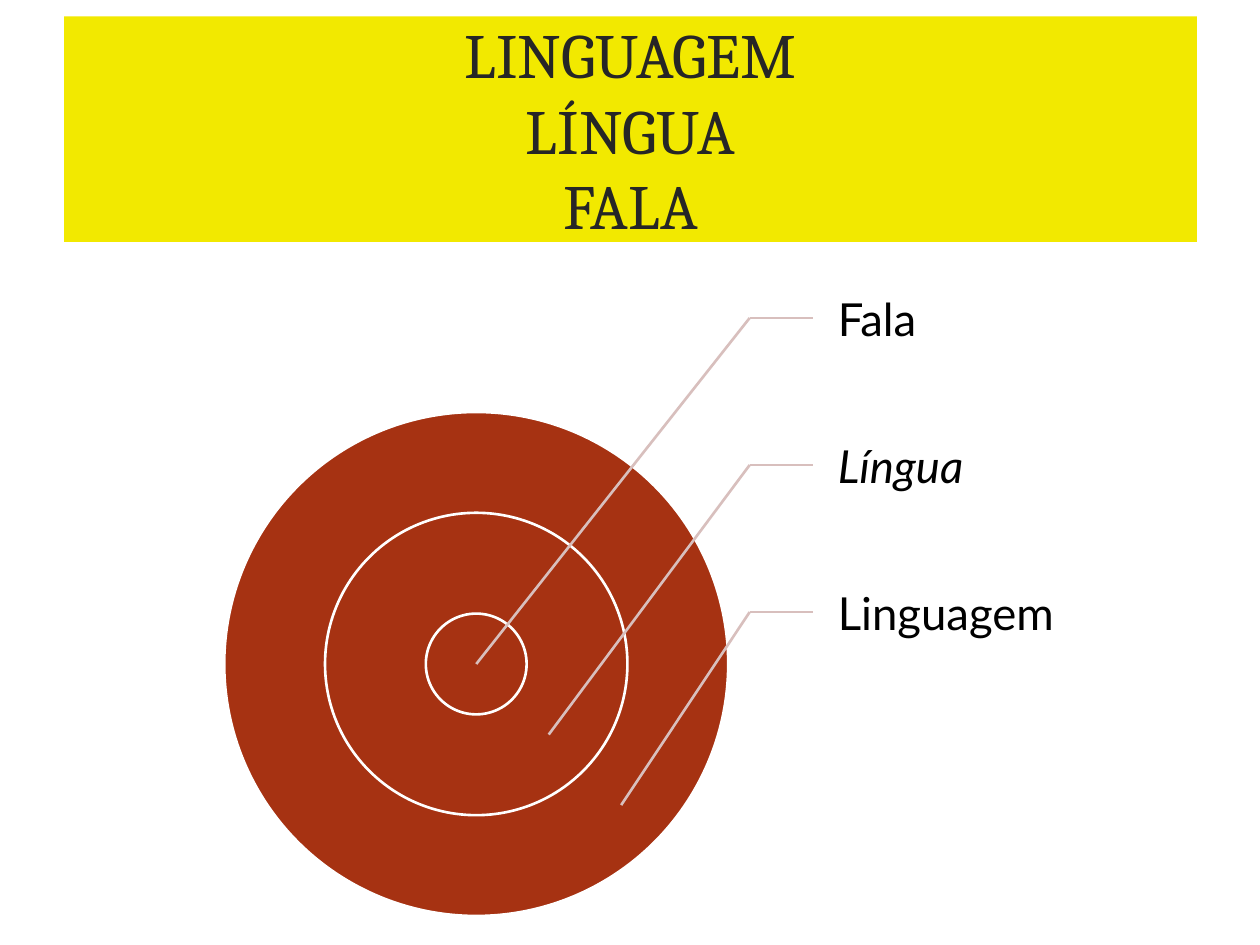
from dataclasses import dataclass

import pptx
import pptx.dml.color
import pptx.enum.shapes
import pptx.enum.text
import pptx.oxml.ns
import pptx.util
from lxml import etree


@dataclass(frozen=True)
class Theme:
    banner: str = "F2E900"
    title: str = "262626"
    disc: str = "A63212"
    outline: str = "FFFFFF"
    leader: str = "D8BFBD"
    label: str = "000000"
    title_font: str = "Cambria"
    label_font: str = "Lato"
    title_size: float = 36
    label_size: float = 26
    line_width: float = 1.5


@dataclass(frozen=True)
class Ring:
    name: str
    italic: bool = False


@dataclass(frozen=True)
class Target:
    cx: float = 3.78
    cy: float = 5.27
    core: float = 0.8
    growth: float = 1.6
    tip_dx: float = 0.575
    tip_dy: float = 0.56
    elbow_x: float = 5.95
    label_x: float = 6.45
    label_w: float = 2
    top: float = 1.94
    row: float = 1.167


THEME = Theme()
TARGET = Target()
TITLE_LINES = ("LINGUAGEM", "LÍNGUA", "FALA")
RINGS = (Ring("Fala"), Ring("Língua", italic=True), Ring("Linguagem"))
inch = pptx.util.Inches


def rgb(value: str) -> pptx.dml.color.RGBColor:
    return pptx.dml.color.RGBColor.from_string(value)


def add_run(p, text: str, font: str, size: float, color: str, italic: bool = False) -> None:
    r = p.add_run()
    r.text = text
    r.font.name = font
    r.font.size = pptx.util.Pt(size)
    r.font.color.rgb = rgb(color)
    r.font.italic = italic


def set_title(sp) -> None:
    sp.left, sp.top, sp.width, sp.height = map(inch, (0.51, 0.13, 8.99, 1.79))
    sp.fill.solid()
    sp.fill.fore_color.rgb = rgb(THEME.banner)
    tf = sp.text_frame
    tf.auto_size = pptx.enum.text.MSO_AUTO_SIZE.NONE
    tf.vertical_anchor = pptx.enum.text.MSO_ANCHOR.MIDDLE
    p = tf.paragraphs[0]
    p.alignment = pptx.enum.text.PP_ALIGN.CENTER
    for i, line in enumerate(TITLE_LINES):
        if i:
            p.add_line_break()
        add_run(p, line, THEME.title_font, THEME.title_size, THEME.title)


def add_disc(shapes, index: int) -> None:
    d = TARGET.core + TARGET.growth * index
    sp = shapes.add_shape(
        pptx.enum.shapes.MSO_SHAPE.OVAL,
        inch(TARGET.cx - d / 2), inch(TARGET.cy - d / 2), inch(d), inch(d),
    )
    sp.shadow.inherit = False
    sp.fill.solid()
    sp.fill.fore_color.rgb = rgb(THEME.disc)
    sp.line.color.rgb = rgb(THEME.outline)
    sp.line.width = pptx.util.Pt(THEME.line_width)


def add_leader(shapes, start: tuple[float, float], end: tuple[float, float]) -> None:
    sp = shapes.add_connector(
        pptx.enum.shapes.MSO_CONNECTOR.STRAIGHT, *map(inch, (*start, *end))
    )
    sp.line.color.rgb = rgb(THEME.leader)
    sp.line.width = pptx.util.Pt(THEME.line_width)
    etree.SubElement(sp._element.spPr, pptx.oxml.ns.qn("a:effectLst"))


def add_label(shapes, index: int, ring: Ring) -> None:
    top = TARGET.top + TARGET.row * index
    sp = shapes.add_textbox(*map(inch, (TARGET.label_x, top, TARGET.label_w, TARGET.row)))
    tf = sp.text_frame
    tf.word_wrap = True
    tf.vertical_anchor = pptx.enum.text.MSO_ANCHOR.MIDDLE
    tf.margin_left = inch(0.2)
    tf.margin_top = tf.margin_right = tf.margin_bottom = inch(0.04)
    add_run(tf.paragraphs[0], ring.name, THEME.label_font, THEME.label_size, THEME.label, ring.italic)
    elbow = (TARGET.elbow_x, top + TARGET.row / 2)
    tip = (TARGET.cx + TARGET.tip_dx * index, TARGET.cy + TARGET.tip_dy * index)
    add_leader(shapes, elbow, (TARGET.label_x, elbow[1]))
    add_leader(shapes, elbow, tip)


def main() -> None:
    """Build the slide of nested circles for language, tongue and speech."""
    prs = pptx.Presentation()
    prs.slide_width, prs.slide_height = inch(10), inch(7.5)
    s = prs.slides.add_slide(prs.slide_layouts.get_by_name("Title Only"))
    set_title(s.shapes.title)
    group = s.shapes.add_group_shape()
    for index in reversed(range(len(RINGS))):
        add_disc(group.shapes, index)
    for index, ring in enumerate(RINGS):
        add_label(group.shapes, index, ring)
    prs.save("out.pptx")


if __name__ == "__main__":
    main()
